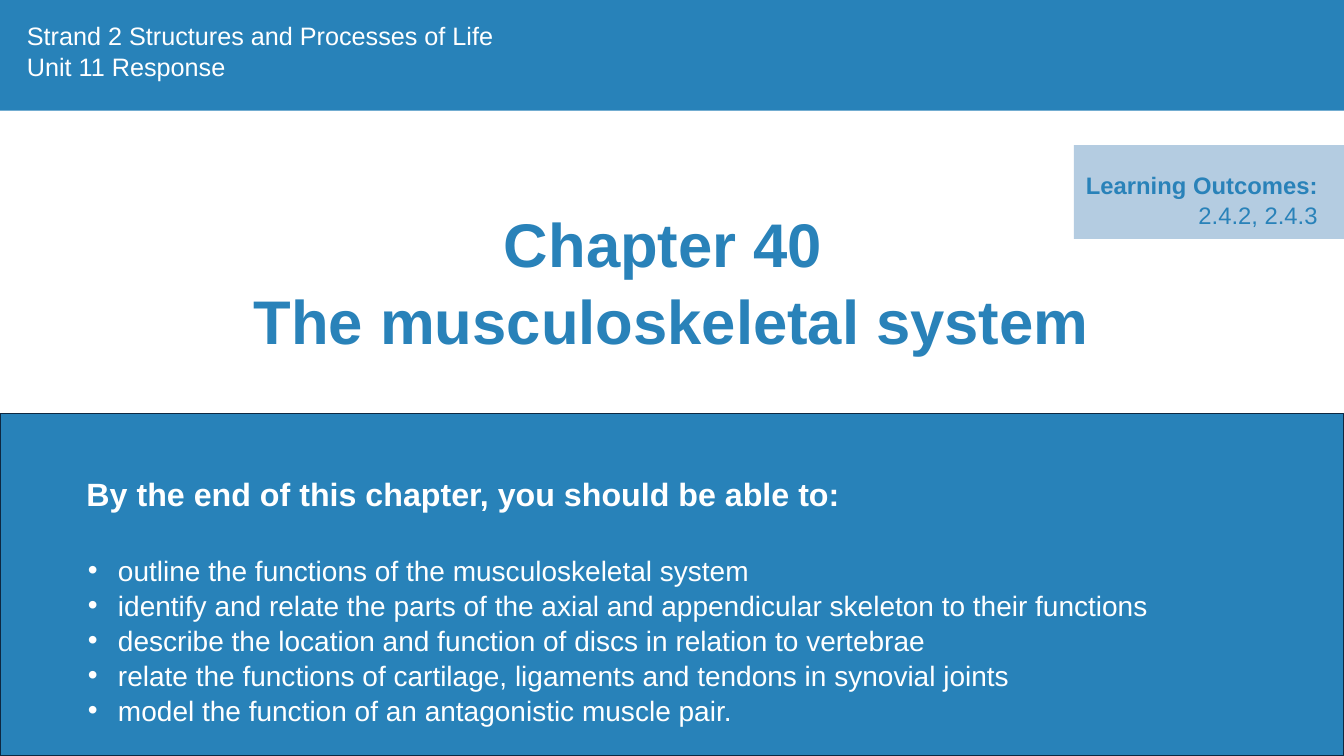
from lxml.etree import SubElement
from pptx import Presentation
from pptx.dml.color import RGBColor
from pptx.enum.shapes import MSO_SHAPE
from pptx.enum.text import PP_ALIGN
from pptx.oxml.ns import qn
from pptx.util import Pt

BAND_BLUE = RGBColor(0x28, 0x82, 0xB9)
TEXT_BLUE = RGBColor(0x29, 0x82, 0xB9)
PALE_BLUE = RGBColor(0xB4, 0xCC, 0xE1)
NAVY = RGBColor(0x0E, 0x28, 0x41)
WHITE = RGBColor(0xFF, 0xFF, 0xFF)

SLIDE_WIDTH, SLIDE_HEIGHT = 960, 540

presentation = Presentation()
presentation.slide_width = Pt(SLIDE_WIDTH)
presentation.slide_height = Pt(SLIDE_HEIGHT)
slide = presentation.slides.add_slide(presentation.slide_layouts[6])


def add_panel(left, top, width, height, fill, outline=None):
    panel = slide.shapes.add_shape(
        MSO_SHAPE.RECTANGLE, Pt(left), Pt(top), Pt(width), Pt(height))
    panel.shadow.inherit = False
    panel.fill.solid()
    panel.fill.fore_color.rgb = fill
    if outline is None:
        panel.line.fill.background()
    else:
        panel.line.color.rgb = outline
        panel.line.width = Pt(0.75)


def add_text(left, top, width, height, lines, size, color,
             bold=False, align=PP_ALIGN.LEFT):
    """Add a text box with one paragraph per line and return its paragraphs."""
    frame = slide.shapes.add_textbox(
        Pt(left), Pt(top), Pt(width), Pt(height)).text_frame
    frame.word_wrap = True
    frame.margin_left = frame.margin_right = Pt(7.2)
    frame.margin_top = frame.margin_bottom = Pt(7.2)
    frame.text = "\n".join(lines)
    for paragraph in frame.paragraphs:
        paragraph.alignment = align
        paragraph.line_spacing = 1.04
        for run in paragraph.runs:
            run.font.name = "Arial"
            run.font.size = Pt(size)
            run.font.bold = bold
            run.font.color.rgb = color
    return frame.paragraphs


add_panel(0, 0, SLIDE_WIDTH, 79, BAND_BLUE)
add_panel(0, 295.2, SLIDE_WIDTH, 244.8, BAND_BLUE, NAVY)
add_panel(767, 103.7, 193, 67, PALE_BLUE)

add_text(96.5, 138, 766.8, 121, ["Chapter 40 ", "The musculoskeletal system"],
         44, TEXT_BLUE, bold=True, align=PP_ALIGN.CENTER)

outcomes = add_text(767, 114, 181.4, 55.4, ["Learning Outcomes: "],
                    17, TEXT_BLUE, bold=True, align=PP_ALIGN.RIGHT)[0]
outcome_codes = outcomes.add_run()
outcome_codes.text = "2.4.2, 2.4.3"
outcome_codes.font.name = "Arial"
outcome_codes.font.size = Pt(17)
outcome_codes.font.color.rgb = TEXT_BLUE

add_text(12.2, 6.5, 535, 58.3,
         ["Strand 2 Structures and Processes of Life", "Unit 11 Response"],
         18, WHITE)

heading, *goals = add_text(54.7, 330.5, 839.5, 191.5, [
    "By the end of this chapter, you should be able to:",
    "outline the functions of the musculoskeletal system",
    "identify and relate the parts of the axial and appendicular skeleton to their functions",
    "describe the location and function of discs in relation to vertebrae",
    "relate the functions of cartilage, ligaments and tendons in synovial joints",
    "model the function of an antagonistic muscle pair.",
], 20, WHITE)
heading.runs[0].font.size = Pt(23)
heading.runs[0].font.bold = True
heading.space_after = Pt(28)
for goal in goals:
    properties = goal._p.get_or_add_pPr()
    properties.set("marL", str(Pt(22.5)))
    properties.set("indent", str(-Pt(21.5)))
    bullet_color = SubElement(properties, qn("a:buClr"))
    SubElement(bullet_color, qn("a:srgbClr")).set("val", str(WHITE))
    SubElement(properties, qn("a:buFont")).set("typeface", "Arial")
    SubElement(properties, qn("a:buChar")).set("char", "•")

presentation.save("out.pptx")
